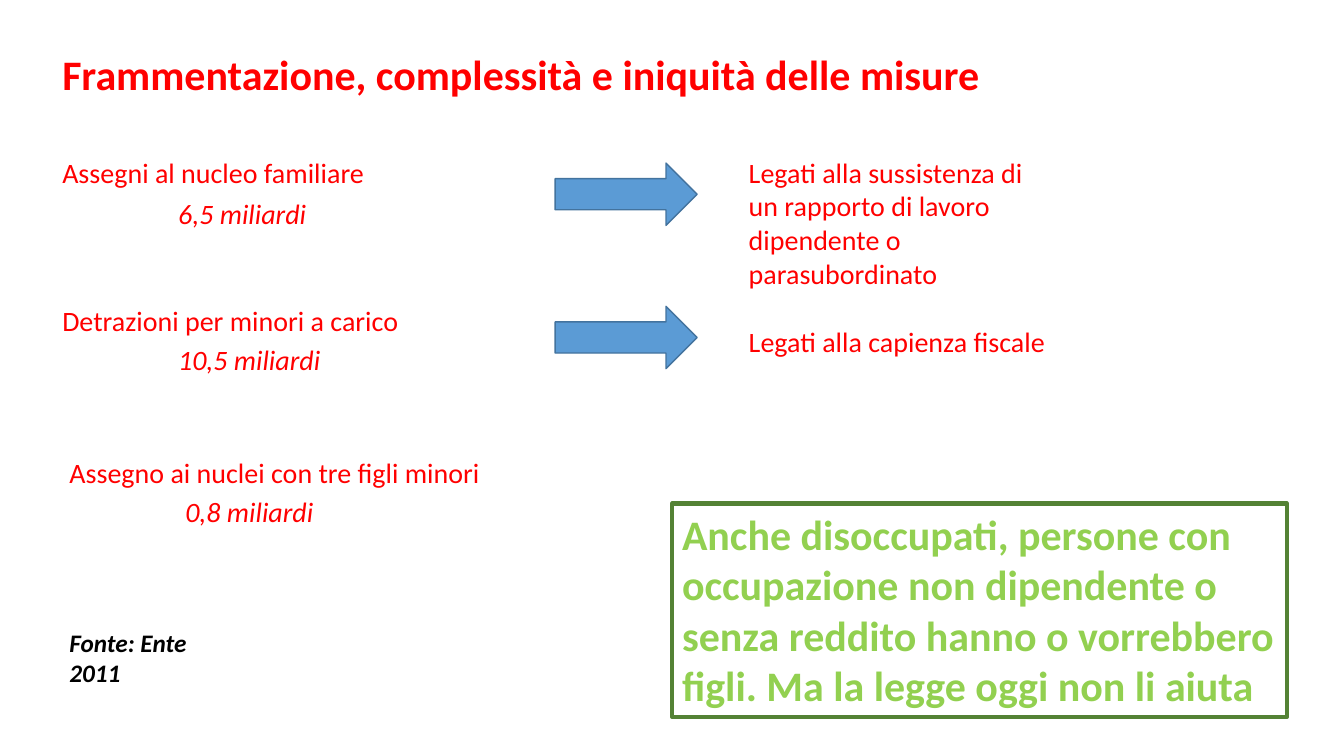
from pptx import Presentation
from pptx.dml.color import RGBColor
from pptx.enum.shapes import MSO_SHAPE
from pptx.enum.text import MSO_ANCHOR, PP_ALIGN
from pptx.util import Cm, Pt

RED, BLACK, LIME, GREEN = "FF0000", "000000", "92D050", "548235"
BLUE, DARK_BLUE = "5B9BD5", "43739E"

TITLE = "Frammentazione, complessità e iniquità delle misure"
# Measure, its cost, left, top of the measure, top of the cost (cm)
MEASURES = [
    ("Assegni al nucleo familiare", "6,5 miliardi", 1.32, 3.79, 4.83),
    ("Detrazioni per minori a carico", "10,5 miliardi", 1.32, 7.52, 8.51),
    ("Assegno ai nuclei con tre figli minori", "0,8 miliardi", 1.5, 11.35, 12.34),
]
# Condition, its top and height, top of the arrow pointing at it (cm)
CONDITIONS = [
    ("Legati alla sussistenza di un rapporto di lavoro dipendente o parasubordinato",
     3.79, 3.68, 4.11),
    ("Legati alla capienza fiscale", 8.05, 1.12, 7.72),
]
CONCLUSION = ("Anche disoccupati, persone con occupazione non dipendente o senza reddito "
              "hanno o vorrebbero figli. Ma la legge oggi non li aiuta")
SOURCE = "Fonte: Ente 2011"

MEASURE_WIDTH, LINE_HEIGHT, COST_INDENT = 11.79, 1.12, 2.92


def rgb(color):
    return RGBColor.from_string(color)


def write(shape, text, size=20, color=RED, bold=False, italic=False, wrap=True):
    frame = shape.text_frame
    frame.text = text
    frame.word_wrap = wrap
    paragraph = frame.paragraphs[0]
    paragraph.alignment = PP_ALIGN.LEFT
    font = paragraph.runs[0].font
    font.name, font.size = "Calibri", Pt(size)
    font.bold, font.italic = bold, italic
    font.color.rgb = rgb(color)


def add_text(slide, box, text, **style):
    write(slide.shapes.add_textbox(*map(Cm, box)), text, **style)


def add_outlined(slide, kind, box, line, line_width, fill=None):
    shape = slide.shapes.add_shape(kind, *map(Cm, box))
    shape.shadow.inherit = False
    if fill:
        shape.fill.solid()
        shape.fill.fore_color.rgb = rgb(fill)
    else:
        shape.fill.background()
    shape.line.color.rgb = rgb(line)
    shape.line.width = Pt(line_width)
    return shape


def main():
    deck = Presentation()
    deck.slide_width, deck.slide_height = Cm(33.87), Cm(19.05)
    slide = deck.slides.add_slide(deck.slide_layouts[6])

    add_text(slide, (1.32, 1.09, 24.38, 1.55), TITLE, size=30, bold=True)

    for measure, cost, left, top, cost_top in MEASURES:
        add_text(slide, (left, top, MEASURE_WIDTH, LINE_HEIGHT), measure)
        add_text(slide, (left + COST_INDENT, cost_top, MEASURE_WIDTH, LINE_HEIGHT),
                 cost, italic=True)

    for condition, top, height, arrow_top in CONDITIONS:
        add_outlined(slide, MSO_SHAPE.RIGHT_ARROW, (13.99, arrow_top, 3.58, 1.57),
                     DARK_BLUE, 1, fill=BLUE)
        add_text(slide, (18.62, top, 8.05, height), condition)

    conclusion = add_outlined(slide, MSO_SHAPE.RECTANGLE, (16.94, 12.69, 15.49, 5.38),
                              GREEN, 3)
    write(conclusion, CONCLUSION, size=30, color=LIME, bold=True)
    conclusion.text_frame.vertical_anchor = MSO_ANCHOR.TOP

    add_text(slide, (1.5, 15.68, 4.6, 1.02), SOURCE, size=18, color=BLACK,
             bold=True, italic=True, wrap=False)

    deck.save("out.pptx")


if __name__ == "__main__":
    main()
